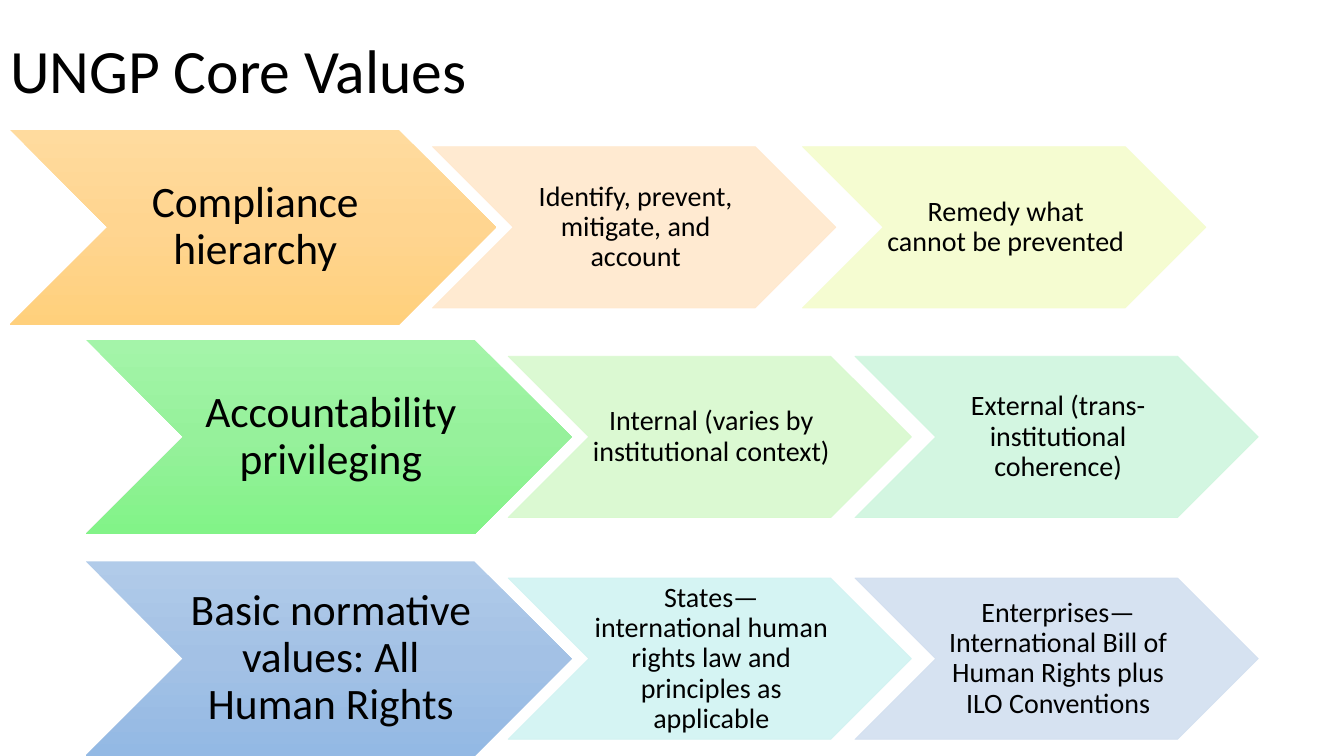
from copy import deepcopy

from lxml import etree
from pptx import Presentation
from pptx.dml.color import RGBColor
from pptx.enum.shapes import MSO_SHAPE
from pptx.enum.text import MSO_ANCHOR, PP_ALIGN
from pptx.oxml.ns import qn
from pptx.util import Inches, Pt

CHEVRON = MSO_SHAPE.CHEVRON
MIDDLE = MSO_ANCHOR.MIDDLE
LEFT, CENTER = PP_ALIGN.LEFT, PP_ALIGN.CENTER

FONT = "Calibri"
COLORS = {
    "text": "000000",
    "orange": ("FFDB9E", "FFD590", "FFD07C"),
    "green": ("A4F4A9", "96F19B", "82F388"),
    "blue": ("B1CBE9", "A3C1E5", "93B9E4"),
    "peach": "FFE8CC",
    "lime": "F5FCCD",
    "light green": "D8F9CE",
    "mint": "CFF6DE",
    "aqua": "D1F3F2",
    "light blue": "D2DFF0",
}

HEAD_WIDTH, HEAD_HEIGHT = 4.82, 1.93
DETAIL_WIDTH, DETAIL_HEIGHT = 4, 1.6
DETAIL_OFFSET = 4.19

ROWS = [
    (0.1, 1.29, 3.67, "Compliance hierarchy", "orange", [
        ("Identify, prevent, mitigate, and account", "peach"),
        ("Remedy what cannot be prevented", "lime"),
    ]),
    (0.85, 3.37, 3.44, "Accountability privileging", "green", [
        ("Internal (varies by institutional context)", "light green"),
        ("External (trans-institutional coherence)", "mint"),
    ]),
    (0.85, 5.57, 3.44, "Basic normative values: All Human Rights", "blue", [
        ("States—international human rights law and principles as applicable",
         "aqua"),
        ("Enterprises—International Bill of Human Rights plus ILO Conventions",
         "light blue"),
    ]),
]


def rgb(name):
    return RGBColor.from_string(COLORS[name])


def write_text(shape, text, size, alignment):
    frame = shape.text_frame
    frame.text = text
    frame.word_wrap = True
    frame.vertical_anchor = MIDDLE
    paragraph = frame.paragraphs[0]
    paragraph.alignment = alignment
    paragraph.line_spacing = 0.9
    paragraph.font.name = FONT
    paragraph.font.size = Pt(size)
    paragraph.font.color.rgb = rgb("text")


def add_title(slide, text):
    title = slide.shapes.title
    title.left, title.top = Inches(0), Inches(0)
    title.width, title.height = Inches(6.67), Inches(1.45)
    write_text(title, text, 44, LEFT)


def add_chevron(slide, left, top, width, height, text, size, insets):
    shape = slide.shapes.add_shape(
        CHEVRON, Inches(left), Inches(top), Inches(width), Inches(height))
    shape.shadow.inherit = False
    write_text(shape, text, size, CENTER)
    frame = shape.text_frame
    side, edge = insets
    frame.margin_left, frame.margin_right = Inches(side), Inches(0)
    frame.margin_top = frame.margin_bottom = Inches(edge)
    return shape


def add_head(slide, left, top, text, color):
    shape = add_chevron(slide, left, top, HEAD_WIDTH, HEAD_HEIGHT,
                        text, 31, (0.04, 0.02))
    shape.line.fill.background()
    shape.fill.gradient()
    shape.fill.gradient_angle = 270
    stop_list = shape.element.spPr.find(".//" + qn("a:gsLst"))
    stop_list.append(deepcopy(stop_list[0]))
    stops = shape.fill.gradient_stops
    for stop, position, value in zip(stops, (0, 0.5, 1), COLORS[color]):
        stop.position = position
        stop.color.rgb = RGBColor.from_string(value)


def add_detail(slide, left, top, text, color):
    shape = add_chevron(slide, left, top, DETAIL_WIDTH, DETAIL_HEIGHT,
                        text, 20, (0.03, 0.01))
    shape.fill.solid()
    shape.fill.fore_color.rgb = rgb(color)
    shape.line.color.rgb = rgb(color)
    shape.line.width = Pt(0.5)
    for element in shape.element.spPr.iter(qn("a:srgbClr")):
        etree.SubElement(element, qn("a:alpha")).set("val", "90000")


def main():
    presentation = Presentation()
    presentation.slide_width = Inches(13.33)
    presentation.slide_height = Inches(7.5)
    slide = presentation.slides.add_slide(presentation.slide_layouts[5])
    add_title(slide, "UNGP Core Values")
    for left, top, step, heading, color, details in ROWS:
        add_head(slide, left, top, heading, color)
        detail_top = top + (HEAD_HEIGHT - DETAIL_HEIGHT) / 2
        for index, (text, detail_color) in enumerate(details):
            detail_left = left + DETAIL_OFFSET + index * step
            add_detail(slide, detail_left, detail_top, text, detail_color)
    presentation.save("out.pptx")


if __name__ == "__main__":
    main()
